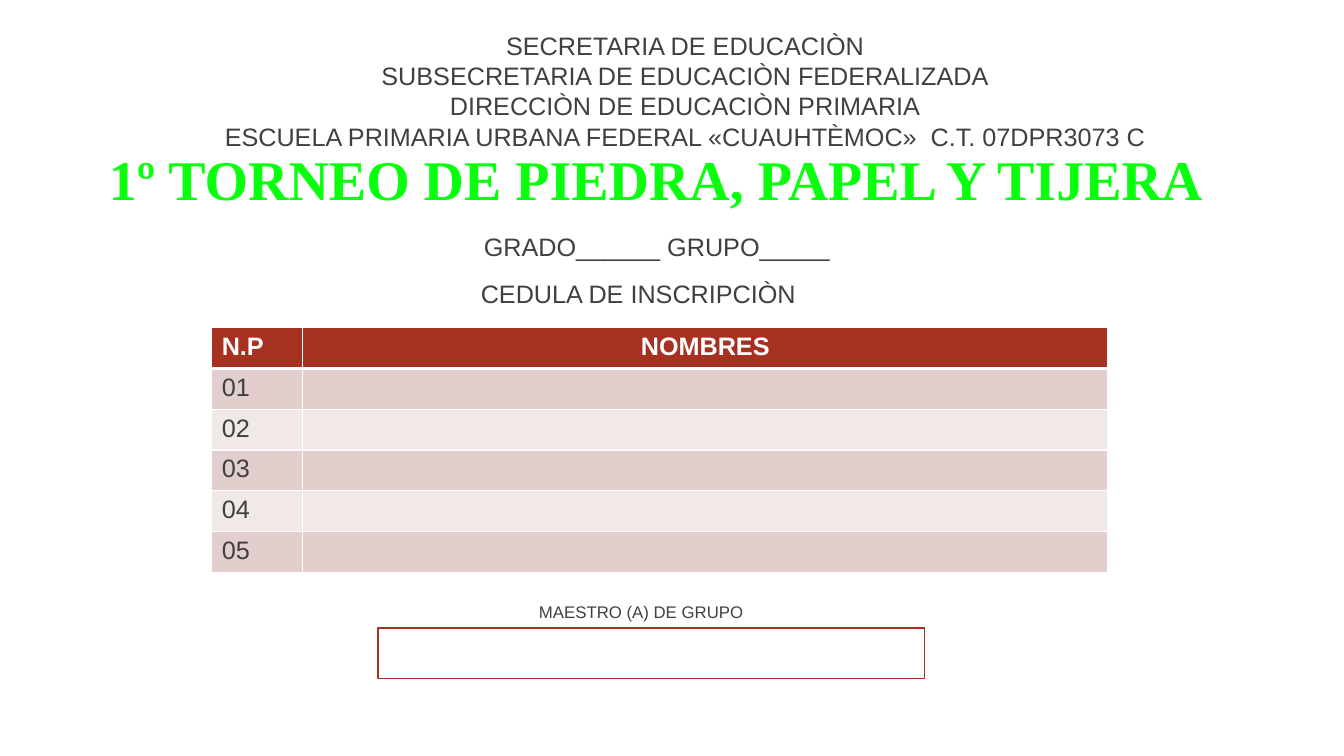
from lxml.etree import SubElement
from pptx import Presentation
from pptx.dml.color import RGBColor
from pptx.enum.shapes import MSO_SHAPE
from pptx.enum.text import MSO_ANCHOR, MSO_AUTO_SIZE, PP_ALIGN
from pptx.oxml.ns import qn
from pptx.util import Inches, Pt

WHITE, GRAY, RED, GREEN = "FFFFFF", "404040", "A63121", "09FF0E"
BANDS = ["E1CECD", "F1E8E8"]
SCHOOL_LINES = [
    "SECRETARIA DE EDUCACIÒN",
    "SUBSECRETARIA DE EDUCACIÒN FEDERALIZADA",
    "DIRECCIÒN DE EDUCACIÒN PRIMARIA",
    "ESCUELA PRIMARIA URBANA FEDERAL «CUAUHTÈMOC»  C.T. 07DPR3073 C",
]


def color(value):
    return RGBColor.from_string(value)


def style_paragraph(paragraph, size, text_color, align, bold=False, name="Arial"):
    paragraph.alignment = align
    for run in paragraph.runs:
        font = run.font
        font.name, font.size, font.bold = name, Pt(size), bold
        font.color.rgb = color(text_color)


def add_text(slide, box, lines, size=18, align=PP_ALIGN.CENTER):
    """Add a gray text box that grows with its lines."""
    shape = slide.shapes.add_textbox(*map(Inches, box))
    frame = shape.text_frame
    frame.word_wrap = True
    frame.auto_size = MSO_AUTO_SIZE.SHAPE_TO_FIT_TEXT
    frame.text = "\n".join(lines)
    for paragraph in frame.paragraphs:
        style_paragraph(paragraph, size, GRAY, align)
    return frame


def add_title(slide, box, text):
    frame = add_text(slide, box, [text])
    frame.auto_size = MSO_AUTO_SIZE.NONE
    frame.vertical_anchor = MSO_ANCHOR.BOTTOM
    paragraph = frame.paragraphs[0]
    paragraph.line_spacing = 0.9
    style_paragraph(paragraph, 40, GREEN, PP_ALIGN.CENTER, True, "Times New Roman")


def set_borders(cell, widths):
    """Draw white borders; widths gives points for each side tag."""
    properties = cell._tc.get_or_add_tcPr()
    for index, (side, width) in enumerate(widths.items()):
        line = SubElement(properties, qn(f"a:{side}"), w=str(Pt(width)))
        fill = SubElement(line, qn("a:solidFill"))
        SubElement(fill, qn("a:srgbClr"), val=WHITE)
        properties.insert(index, line)


def add_names_table(slide, box, number_width, entries):
    left, top, width, height = box
    rows = [("N.P", "NOMBRES")] + [(f"{n:02}", "") for n in range(1, entries + 1)]
    table = slide.shapes.add_table(len(rows), 2, *map(Inches, box)).table
    table.columns[0].width = Inches(number_width)
    table.columns[1].width = Inches(width - number_width)
    for row_index, texts in enumerate(rows):
        header = row_index == 0
        table.rows[row_index].height = Inches(height / len(rows))
        for column_index, text in enumerate(texts):
            cell = table.cell(row_index, column_index)
            cell.text = text
            cell.fill.solid()
            cell.fill.fore_color.rgb = color(RED if header else BANDS[(row_index - 1) % 2])
            paragraph = cell.text_frame.paragraphs[0]
            paragraph.font.size = Pt(18)
            align = PP_ALIGN.CENTER if header and column_index else PP_ALIGN.LEFT
            style_paragraph(paragraph, 18, WHITE if header else GRAY, align, header)
            set_borders(cell, {"lnL": 1, "lnR": 1, "lnT": 3 if row_index == 1 else 1,
                               "lnB": 3 if header else 1})


def add_teacher_field(slide, box):
    left, top, width, height = box
    add_text(slide, (left + 0.11, top - 0.31, 5, 0.3), ["MAESTRO (A) DE GRUPO"], 12)
    field = slide.shapes.add_shape(MSO_SHAPE.RECTANGLE, *map(Inches, box))
    field.shadow.inherit = False
    field.fill.solid()
    field.fill.fore_color.rgb = color(WHITE)
    field.line.color.rgb = color(RED)
    field.line.width = Pt(1)


def main():
    presentation = Presentation()
    presentation.slide_width = Inches(13.33)
    presentation.slide_height = Inches(7.5)
    slide = presentation.slides.add_slide(presentation.slide_layouts[6])
    add_text(slide, (0.92, 0.25, 11.75, 1.31), SCHOOL_LINES)
    add_title(slide, (0.84, 1.22, 11.33, 0.94), "1º TORNEO DE PIEDRA, PAPEL Y TIJERA")
    add_text(slide, (4.16, 2.25, 4.71, 0.4), ["GRADO______ GRUPO_____"])
    add_text(slide, (4.67, 2.71, 3.75, 0.42), ["CEDULA DE INSCRIPCIÒN"], align=PP_ALIGN.LEFT)
    add_names_table(slide, (2.1, 3.25, 8.89, 2.43), 0.9, 5)
    add_teacher_field(slide, (3.75, 6.23, 5.42, 0.5))
    presentation.save("out.pptx")


if __name__ == "__main__":
    main()
